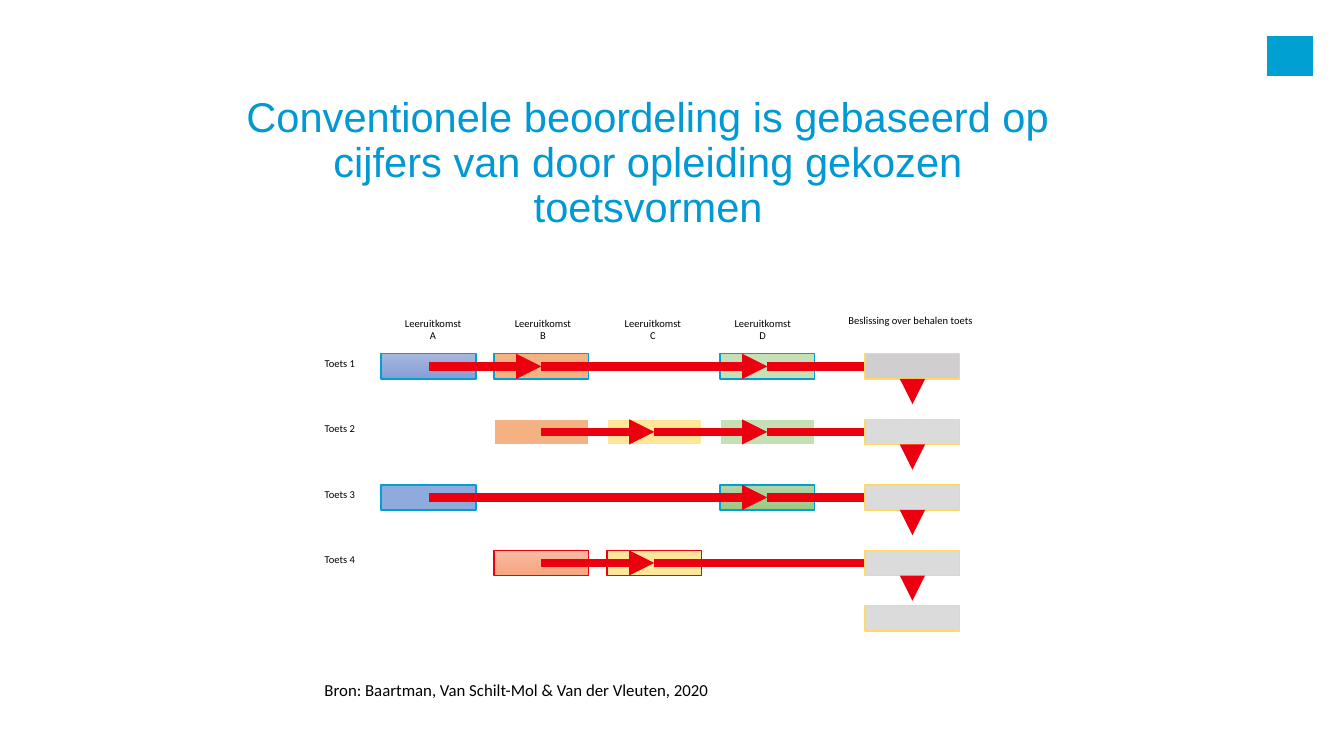
from dataclasses import dataclass

from lxml import etree
from pptx import Presentation
from pptx.dml.color import RGBColor
from pptx.enum.shapes import MSO_CONNECTOR, MSO_SHAPE
from pptx.enum.text import MSO_ANCHOR, PP_ALIGN
from pptx.oxml.ns import qn
from pptx.util import Inches, Pt

RECTANGLE = MSO_SHAPE.RECTANGLE
STRAIGHT = MSO_CONNECTOR.STRAIGHT
LEFT, CENTER, RIGHT = PP_ALIGN.LEFT, PP_ALIGN.CENTER, PP_ALIGN.RIGHT
TOP, MIDDLE = MSO_ANCHOR.TOP, MSO_ANCHOR.MIDDLE
BOTTOM_SIDE = 2


@dataclass(frozen=True)
class Theme:
    title_font: str = "Arial"
    body_font: str = "Calibri"
    title_size: float = 29.7
    label_size: float = 7.5
    source_size: float = 12
    title: str = "0099D4"
    text: str = "000000"
    blue: str = "00A0D2"
    white: str = "FEFFFF"
    red: str = "EC0010"
    gold: str = "FFD966"
    orange: str = "F4B183"
    yellow: str = "FFE699"
    green: str = "C5E0B4"
    periwinkle: str = "8FAADC"
    gray: str = "DBDBDB"
    dark_gray: str = "D0CECE"
    blue_fade: tuple = ("A6B6DF", "869DD7")
    green_fade: tuple = ("B4D4A5", "9BC985")
    orange_fade: tuple = ("F7BCA2", "F8A47F")


THEME = Theme()

BOX_WIDTH, BOX_HEIGHT = 0.94, 0.25
FIRST_COLUMN, COLUMN_STEP = 3.78, 1.12
FIRST_ROW, ROW_STEP = 3.51, 0.65
FIRST_HEADING, HEADING_STEP = 3.31, 1.09
DECISION_LEFT, FINAL_DECISION_TOP = 8.58, 6.01
LABEL_MARGINS = (0.1, 0.04, 0.1, 0.04)

# Per test: outline colour, decision fill, and fill by learning outcome
TESTS = [
    (THEME.blue, THEME.dark_gray,
     {"A": THEME.blue_fade, "B": THEME.orange, "D": THEME.green}),
    (THEME.white, THEME.gray,
     {"B": THEME.orange, "C": THEME.yellow, "D": THEME.green}),
    (THEME.blue, THEME.gray, {"A": THEME.periwinkle, "D": THEME.green_fade}),
    (THEME.red, THEME.gray, {"B": THEME.orange_fade, "C": THEME.yellow}),
]
OUTCOMES = "ABCD"


def color(value):
    return RGBColor.from_string(value)


def column_left(outcome):
    return FIRST_COLUMN + COLUMN_STEP * OUTCOMES.index(outcome)


def row_top(row):
    return FIRST_ROW + ROW_STEP * row


def add_text(slide, lines, left, top, width, height, align=LEFT, anchor=TOP,
             margins=LABEL_MARGINS, font=THEME.body_font, size=THEME.label_size,
             ink=THEME.text, line_spacing=None):
    frame = slide.shapes.add_textbox(Inches(left), Inches(top),
                                     Inches(width), Inches(height)).text_frame
    frame.word_wrap = True
    frame.vertical_anchor = anchor
    (frame.margin_left, frame.margin_top,
     frame.margin_right, frame.margin_bottom) = map(Inches, margins)
    for index, line in enumerate(lines):
        paragraph = frame.paragraphs[0] if index == 0 else frame.add_paragraph()
        paragraph.text = line
        paragraph.alignment = align
        paragraph.line_spacing = line_spacing
        paragraph.font.name = font
        paragraph.font.size = Pt(size)
        paragraph.font.color.rgb = color(ink)


def add_box(slide, left, top, fill, outline, width=BOX_WIDTH, height=BOX_HEIGHT):
    """Add a rectangle; a pair of fills gives a fade from top to bottom."""
    shape = slide.shapes.add_shape(RECTANGLE, Inches(left), Inches(top),
                                   Inches(width), Inches(height))
    shape.shadow.inherit = False
    if isinstance(fill, tuple):
        shape.fill.gradient()
        shape.fill.gradient_angle = 270
        for stop, shade in zip(shape.fill.gradient_stops, fill):
            stop.color.rgb = color(shade)
    else:
        shape.fill.solid()
        shape.fill.fore_color.rgb = color(fill)
    shape.line.color.rgb = color(outline)
    shape.line.width = Pt(1)
    return shape


def add_arrow(slide, start_x, start_y, end_x, end_y):
    arrow = slide.shapes.add_connector(STRAIGHT, Inches(start_x), Inches(start_y),
                                       Inches(end_x), Inches(end_y))
    arrow.line.color.rgb = color(THEME.red)
    arrow.line.width = Pt(6)
    etree.SubElement(arrow.line._get_or_add_ln(), qn("a:tailEnd"), type="triangle")
    etree.SubElement(arrow._element.spPr, qn("a:effectLst"))
    return arrow


def add_headings(slide):
    for index, outcome in enumerate(OUTCOMES):
        add_text(slide, ["Leeruitkomst", outcome],
                 FIRST_HEADING + HEADING_STEP * index, 3.1, 1.97, 0.33, CENTER)
    add_text(slide, ["Beslissing over behalen toets"], 8.13, 3.08, 1.8, 0.2, CENTER)


def add_test(slide, row, outline, decision_fill, fills):
    """Add one test: label, outcome boxes, arrows and the decision box."""
    top = row_top(row)
    middle = top + BOX_HEIGHT / 2
    add_text(slide, [f"Toets {row + 1}"], 1.84, top - 0.01, 1.78, 0.2, RIGHT)
    for outcome, fill in fills.items():
        add_box(slide, column_left(outcome), top, fill, outline)

    lefts = [column_left(outcome) for outcome in fills] + [DECISION_LEFT]
    centers = [left + BOX_WIDTH / 2 for left in lefts]
    for start, end in zip(centers, centers[1:]):
        add_arrow(slide, start, middle, end, middle)

    decision = add_box(slide, DECISION_LEFT, top, decision_fill, THEME.gold)
    bottom = top + BOX_HEIGHT
    down = add_arrow(slide, centers[-1], bottom, centers[-1], bottom + 0.25)
    down.begin_connect(decision, BOTTOM_SIDE)


def main():
    presentation = Presentation()
    presentation.slide_width = Inches(13.33)
    presentation.slide_height = Inches(7.5)
    slide = presentation.slides.add_slide(presentation.slide_layouts[6])

    add_box(slide, 12.57, 0.36, THEME.blue, THEME.blue, 0.45, 0.39)
    add_text(slide, ["Conventionele beoordeling is gebaseerd op cijfers van door "
                     "opleiding gekozen toetsvormen"],
             2.17, 1.06, 8.62, 1.13, CENTER, MIDDLE, (0, 0.05, 0.1, 0.05),
             THEME.title_font, THEME.title_size, THEME.title, 0.9)
    add_headings(slide)
    for row, test in enumerate(TESTS):
        add_test(slide, row, *test)
    add_box(slide, DECISION_LEFT, FINAL_DECISION_TOP, THEME.gray, THEME.gold)
    add_text(slide, ["Bron: Baartman, Van Schilt-Mol & Van der Vleuten, 2020"],
             3.12, 6.7, 4.54, 0.28, size=THEME.source_size)

    presentation.save("out.pptx")


if __name__ == "__main__":
    main()
